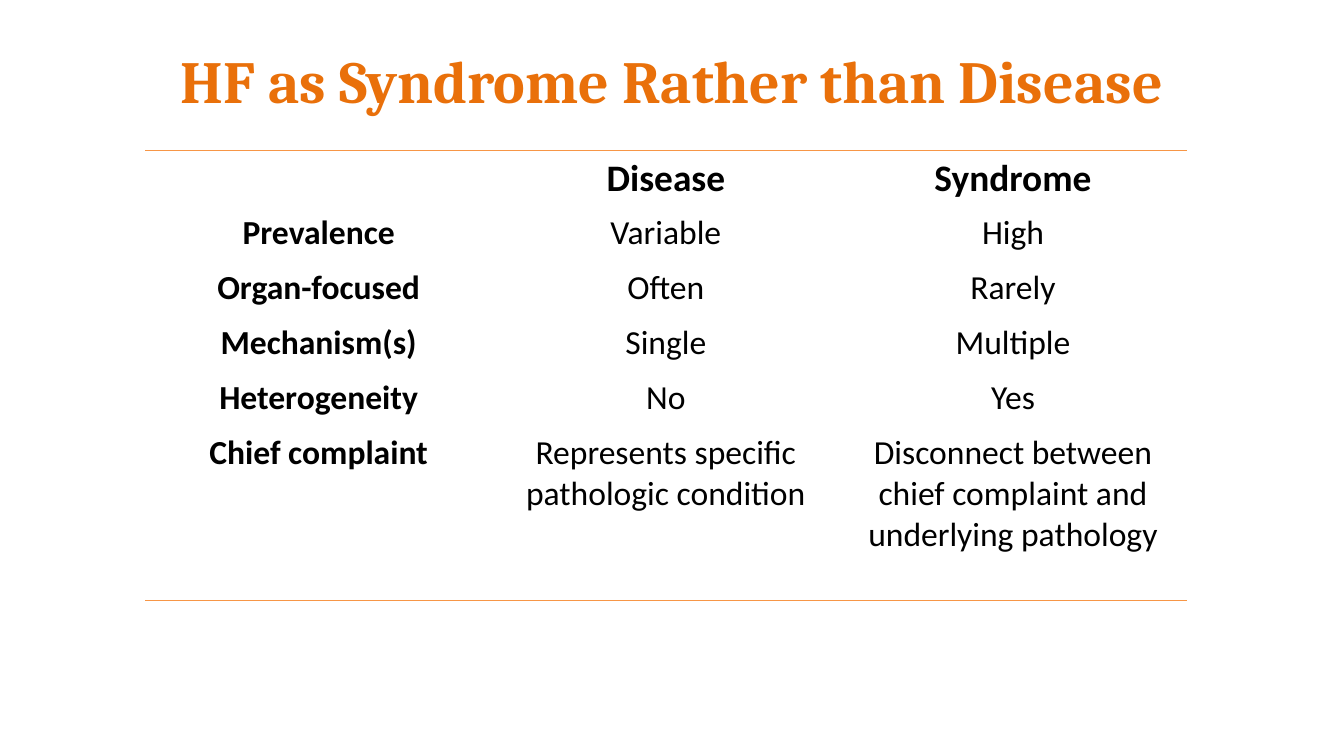
import pptx
import pptx.util
import pptx.dml.color
import pptx.enum.text
import pptx.oxml.ns
import lxml.etree

TITLE = "HF as Syndrome Rather than Disease"
ROWS = [
    ("", "Disease", "Syndrome"),
    ("Prevalence", "Variable", "High"),
    ("Organ-focused", "Often", "Rarely"),
    ("Mechanism(s)", "Single", "Multiple"),
    ("Heterogeneity", "No", "Yes"),
    ("Chief complaint", "Represents specific pathologic condition",
     "Disconnect between chief complaint and underlying pathology"),
]
ORANGE, RULE_COLOR, BLACK = "E9700A", "F79646", "000000"
NO_STYLE_NO_GRID = "{2D5ABB26-0587-4C30-8999-92F81FD0307C}"

# Grid in inches; the slide is 16:9
SLIDE_WIDTH = 10
SLIDE_HEIGHT = SLIDE_WIDTH * 9 / 16
TABLE_LEFT, TABLE_TOP, TABLE_WIDTH = 1.08, 1.12, 7.75
ROW_HEIGHT, LAST_ROW_HEIGHT = 0.41, 1.29

inches = pptx.util.Inches
CENTER = pptx.enum.text.PP_ALIGN.CENTER


def format_text(text_frame, font_name, size, color, bold):
    for paragraph in text_frame.paragraphs:
        paragraph.alignment = CENTER
        for item in [paragraph, *paragraph.runs]:
            item.font.name = font_name
            item.font.size = pptx.util.Pt(size)
            item.font.bold = bold
            item.font.color.rgb = pptx.dml.color.RGBColor.from_string(color)


def add_border(cell, tag, color, points):
    qn = pptx.oxml.ns.qn
    properties = cell._tc.get_or_add_tcPr()
    line = lxml.etree.SubElement(properties, qn(tag), w=str(pptx.util.Pt(points)))
    fill = lxml.etree.SubElement(line, qn("a:solidFill"))
    lxml.etree.SubElement(fill, qn("a:srgbClr"), val=color)


presentation = pptx.Presentation()
presentation.slide_width = inches(SLIDE_WIDTH)
presentation.slide_height = inches(SLIDE_HEIGHT)
slide = presentation.slides.add_slide(presentation.slide_layouts[5])

# Title
title = slide.shapes.title
title.left, title.top = inches(0.5), inches(0.12)
title.width, title.height = inches(9), inches(0.94)
title.text_frame.text = TITLE
title.text_frame.vertical_anchor = pptx.enum.text.MSO_ANCHOR.MIDDLE
format_text(title.text_frame, "Cambria", 32, ORANGE, True)

# Comparison table with a rule above and below
last_row = len(ROWS) - 1
table_height = ROW_HEIGHT * last_row + LAST_ROW_HEIGHT
frame = slide.shapes.add_table(
    len(ROWS), len(ROWS[0]), inches(TABLE_LEFT), inches(TABLE_TOP),
    inches(TABLE_WIDTH), inches(table_height))
table = frame.table
table.first_row = table.horz_banding = False
table._tbl.tblPr.find(pptx.oxml.ns.qn("a:tableStyleId")).text = NO_STYLE_NO_GRID

for row_index, texts in enumerate(ROWS):
    is_header, is_last = row_index == 0, row_index == last_row
    table.rows[row_index].height = inches(LAST_ROW_HEIGHT if is_last else ROW_HEIGHT)
    for column_index, text in enumerate(texts):
        cell = table.cell(row_index, column_index)
        cell.margin_left = cell.margin_right = inches(0.1)
        cell.margin_top = cell.margin_bottom = inches(0.04)
        if is_header:
            add_border(cell, "a:lnT", RULE_COLOR, 1)
        if is_last:
            add_border(cell, "a:lnB", RULE_COLOR, 1)
        cell.fill.background()
        cell.text_frame.text = text
        format_text(cell.text_frame, "Calibri", 20 if is_header else 18, BLACK,
                    is_header or column_index == 0)

presentation.save("out.pptx")
